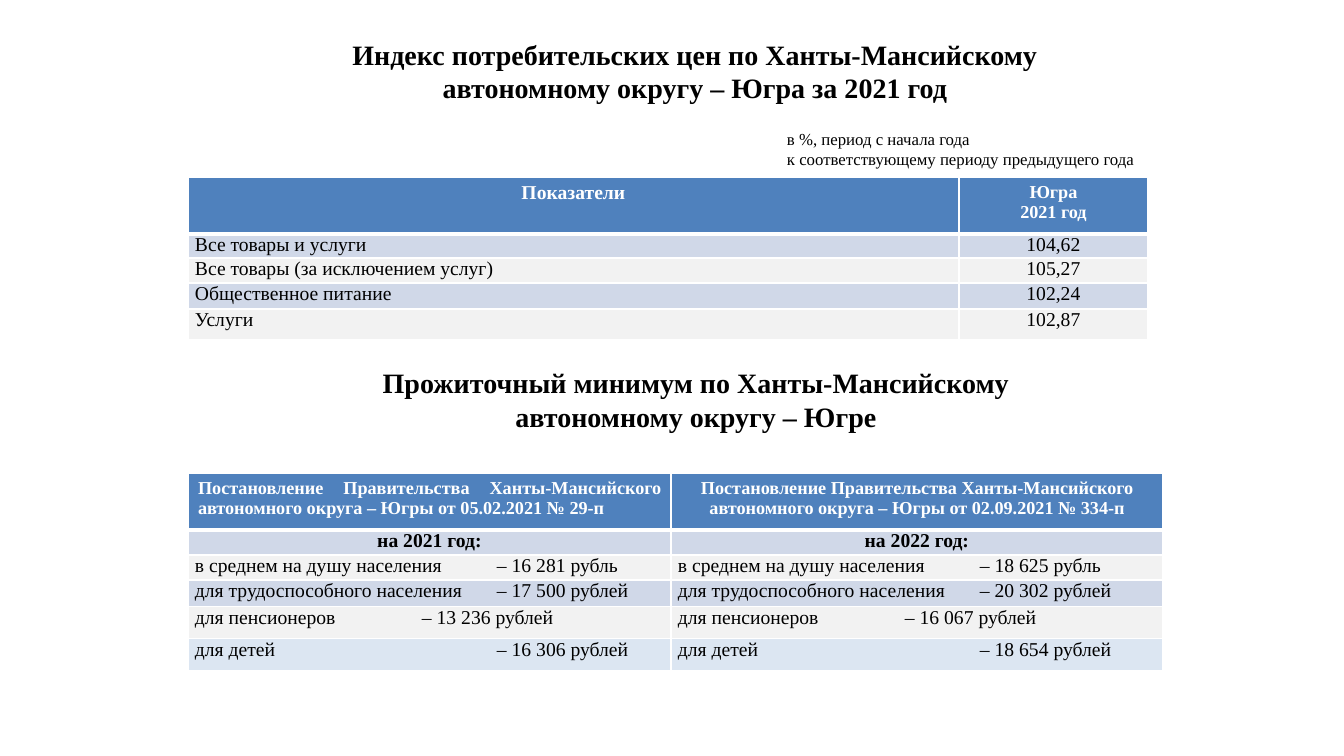
from lxml import etree
from pptx import Presentation
from pptx.dml.color import RGBColor
from pptx.enum.text import MSO_ANCHOR, MSO_AUTO_SIZE, PP_ALIGN
from pptx.oxml.ns import qn
from pptx.util import Emu, Pt

BLACK = RGBColor(0x00, 0x00, 0x00)
WHITE = RGBColor(0xFF, 0xFF, 0xFF)
BLUE = RGBColor(0x4F, 0x81, 0xBD)
BAND = RGBColor(0xD0, 0xD8, 0xE8)
GREY = RGBColor(0xF2, 0xF2, 0xF2)
PALE = RGBColor(0xDC, 0xE6, 0xF2)
CENTER, JUSTIFY = PP_ALIGN.CENTER, PP_ALIGN.JUSTIFY
PX = 914400 / 100.8


def px(n):
    return Emu(round(n * PX))


def write(tf, text, size, color=BLACK, bold=False, align=PP_ALIGN.LEFT):
    tf.text = text
    for p in tf.paragraphs:
        p.alignment = align
        p.font.name = "Times New Roman"
        p.font.size = Pt(size)
        p.font.bold = bold
        p.font.color.rgb = color


prs = Presentation()
prs.slide_width, prs.slide_height = px(1344), px(756)
s = prs.slides.add_slide(prs.slide_layouts[5])

# Headings and unit note
title = s.shapes.title
title.left, title.top, title.width, title.height = px(306), px(32), px(778), px(78)
title.text_frame.auto_size = MSO_AUTO_SIZE.NONE
title.text_frame.vertical_anchor = MSO_ANCHOR.TOP
write(title.text_frame,
      "Индекс потребительских цен по Ханты-Мансийскому автономному округу – Югра за 2021 год",
      20, bold=True, align=CENTER)

note = s.shapes.add_textbox(px(728), px(124), px(428), px(72)).text_frame
note.word_wrap = True
note.margin_left = px(59)
write(note, "в %, период с начала года\nк соответствующему периоду предыдущего года", 12)

subtitle = s.shapes.add_textbox(px(229), px(361), px(934), px(78)).text_frame
subtitle.word_wrap = True
write(subtitle, "Прожиточный минимум по Ханты-Мансийскому\nавтономному округу – Югре",
      20, bold=True, align=CENTER)

# Tables: top, column widths, row heights, header sizes, header alignments,
# body alignments, body fills, tab stops by row, rows of text
price_index = (
    177, [771, 189], [57, 24, 25, 26, 31], [14, 13], [CENTER, CENTER],
    [JUSTIFY, CENTER], [BAND, GREY, BAND, GREY], {},
    [("Показатели", "Югра\n2021 год"),
     ("Все товары и услуги", "104,62"),
     ("Все товары (за исключением услуг)", "105,27"),
     ("Общественное питание", "102,24"),
     ("Услуги", "102,87")])
living_wage = (
    473, [483, 492], [57, 25, 25, 27, 32, 32], [13, 13], [JUSTIFY, CENTER],
    [JUSTIFY, JUSTIFY], [BAND, GREY, BAND, GREY, PALE], {2: 302, 3: 302, 4: 227, 5: 302},
    [("Постановление Правительства Ханты-Мансийского автономного округа – Югры от 05.02.2021 № 29-п",
      "Постановление Правительства Ханты-Мансийского автономного округа – Югры от 02.09.2021 № 334-п"),
     ("на 2021 год:", "на 2022 год:"),
     ("в среднем на душу населения\t– 16 281 рубль", "в среднем на душу населения\t– 18 625 рубль"),
     ("для трудоспособного населения\t– 17 500 рублей", "для трудоспособного населения\t– 20 302 рублей"),
     ("для пенсионеров\t– 13 236 рублей", "для пенсионеров\t– 16 067 рублей"),
     ("для детей\t– 16 306 рублей", "для детей\t– 18 654 рублей")])

for top, widths, heights, head_sizes, head_aligns, aligns, fills, tabs, rows in (price_index, living_wage):
    table = s.shapes.add_table(len(rows), 2, px(188), px(top),
                               px(sum(widths)), px(sum(heights))).table
    table.horz_banding = False
    for column, width in zip(table.columns, widths):
        column.width = px(width)
    for i, texts in enumerate(rows):
        table.rows[i].height = px(heights[i])
        for j, text in enumerate(texts):
            cell = table.cell(i, j)
            if i == 0:
                write(cell.text_frame, text, head_sizes[j], WHITE, True, head_aligns[j])
            else:
                cell.margin_left = cell.margin_right = px(7)
                cell.margin_top = cell.margin_bottom = 0
                year_row = text.endswith(":")
                write(cell.text_frame, text, 14, bold=year_row,
                      align=CENTER if year_row else aligns[j])
            if i in tabs:
                pPr = cell.text_frame.paragraphs[0]._p.get_or_add_pPr()
                tab_list = etree.Element(qn("a:tabLst"))
                etree.SubElement(tab_list, qn("a:tab"), pos=str(px(tabs[i])), algn="l")
                pPr.insert(0, tab_list)

            tcPr = cell._tc.get_or_add_tcPr()
            for side in "LRTB":
                thick = (i, side) in ((0, "B"), (1, "T"))
                ln = etree.SubElement(tcPr, qn(f"a:ln{side}"), w=str(Pt(3 if thick else 1)))
                line_fill = etree.SubElement(ln, qn("a:solidFill"))
                etree.SubElement(line_fill, qn("a:srgbClr"), val=str(WHITE))
            cell.fill.solid()
            cell.fill.fore_color.rgb = fills[i - 1] if i else BLUE

prs.save("out.pptx")
